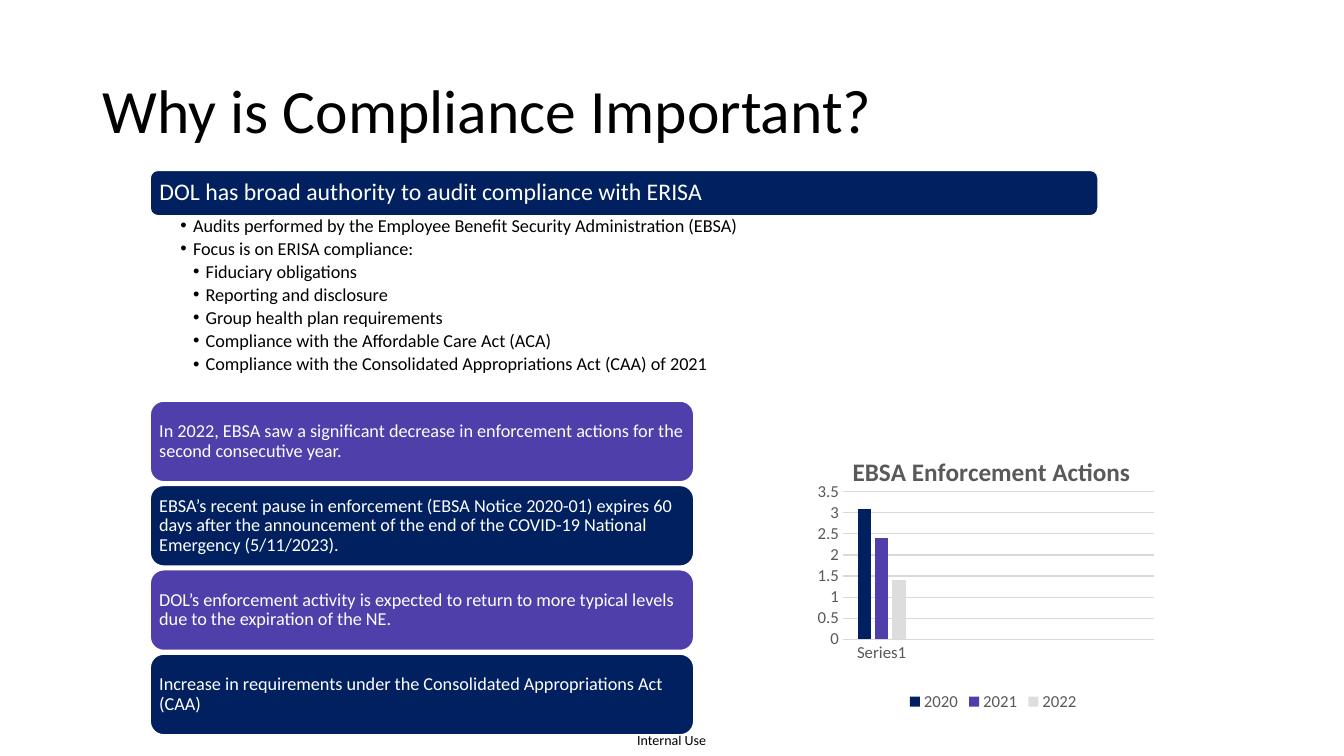
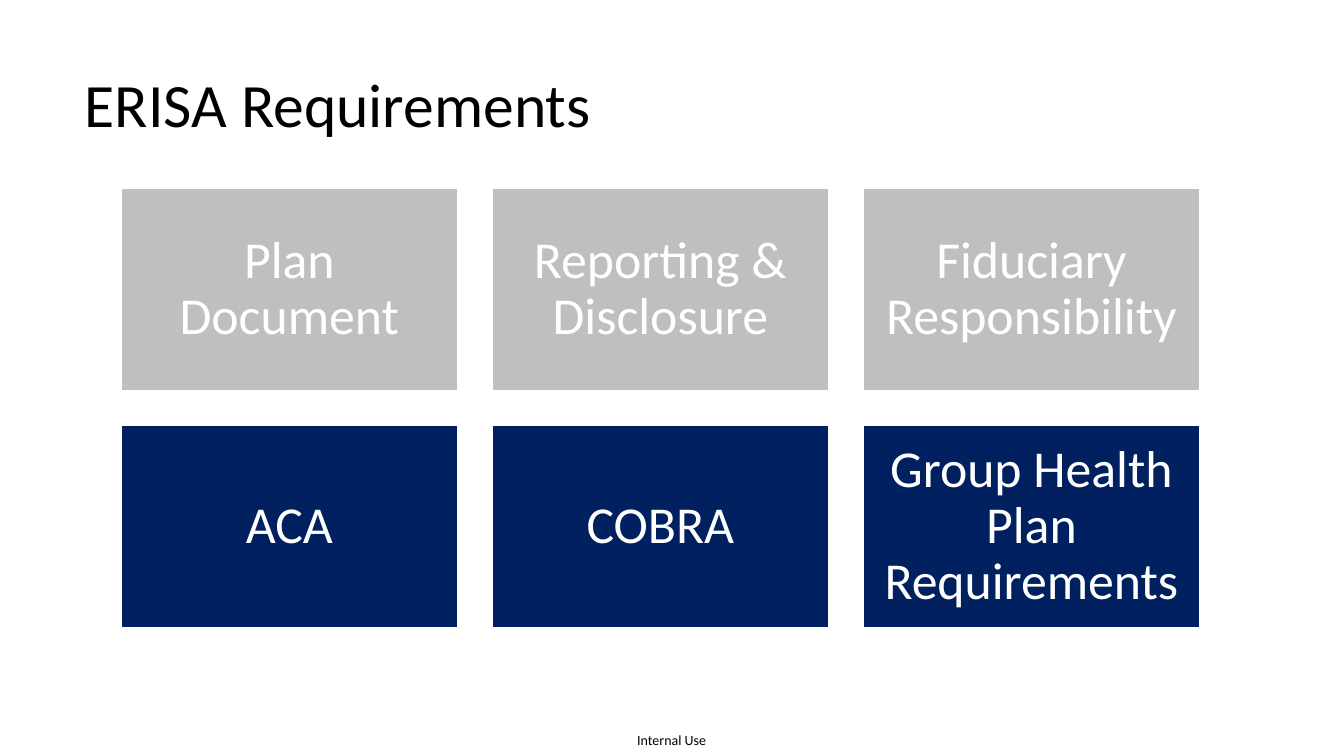
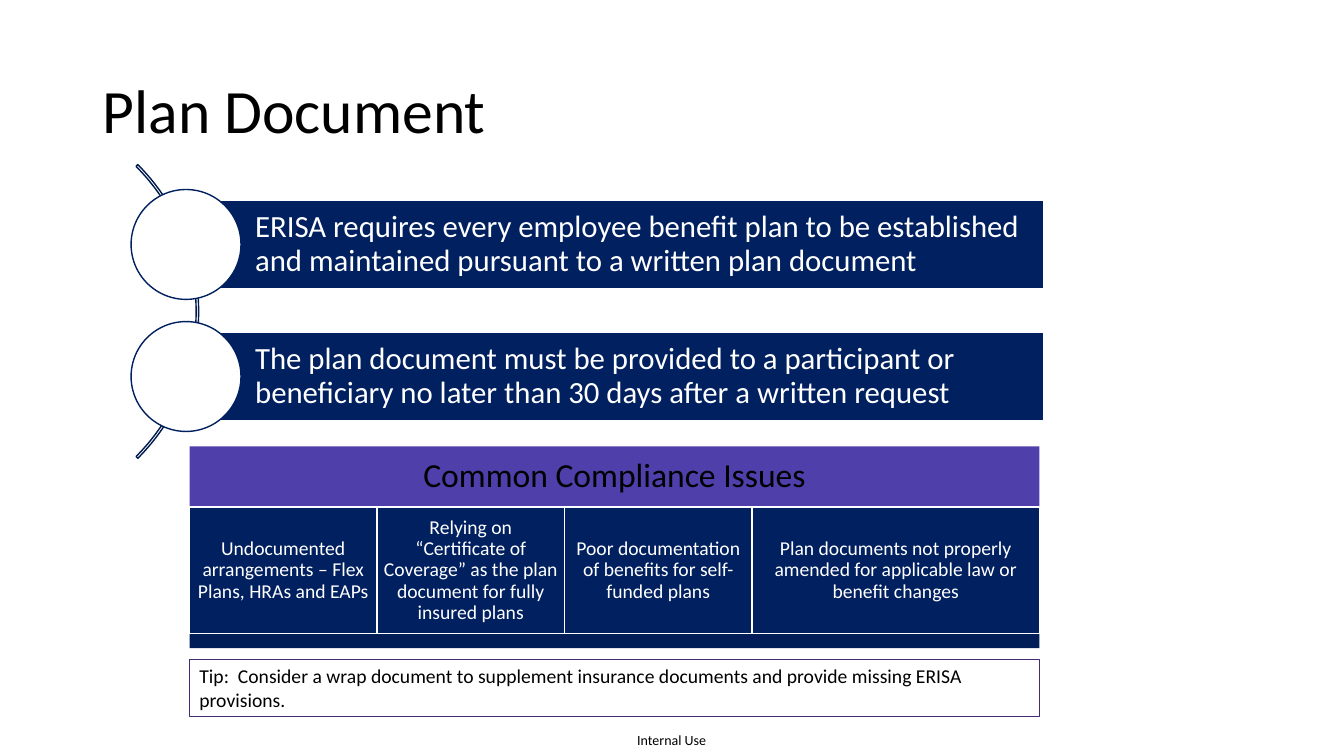
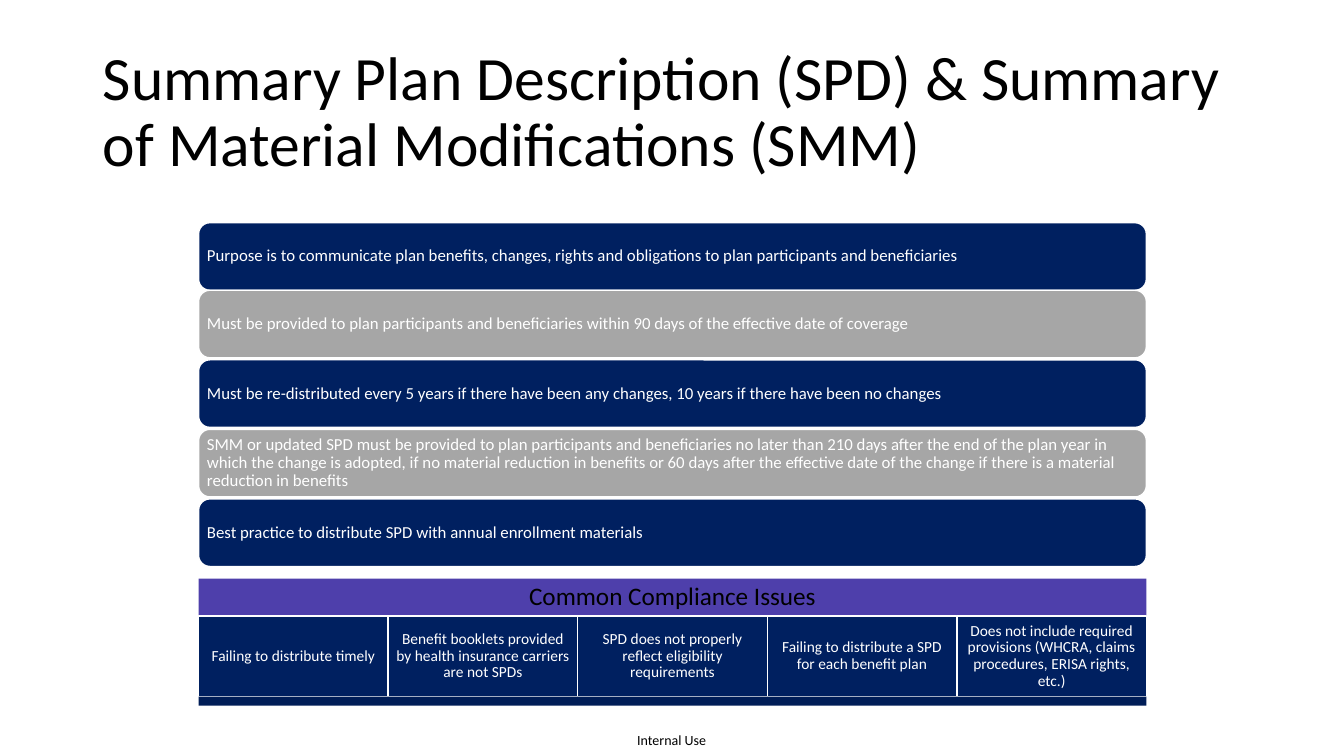
from lxml.etree import SubElement
from pptx import Presentation
from pptx.chart.data import CategoryChartData
from pptx.dml.color import RGBColor
from pptx.enum.chart import XL_CHART_TYPE, XL_LEGEND_POSITION, XL_TICK_MARK
from pptx.enum.shapes import MSO_SHAPE
from pptx.enum.text import MSO_ANCHOR, MSO_AUTO_SIZE, PP_ALIGN
from pptx.oxml.ns import qn
from pptx.util import Inches, Pt

# Shared style
FONT = "Calibri"
COLORS = {
    "navy": "002060", "deep": "001D57", "arc": "001A4D", "purple": "4E3FAB",
    "plum": "452B73", "gray": "A6A6A6", "silver": "BFBFBF", "pale": "DDDDDD",
    "grid": "D9D9D9", "label": "595959", "white": "FFFFFF", "black": "000000",
}
FOOTER = "Internal Use"
TITLE_BOX = (0.92, 0.4, 11.5, 1.45)

# Slide 1: audits
AUDIT_TITLE = "Why is Compliance Important?"
AUDIT_HEAD = "DOL has broad authority to audit compliance with ERISA"
AUDIT_BULLETS = [
    (1, "Audits performed by the Employee Benefit Security Administration (EBSA)"),
    (1, "Focus is on ERISA compliance:"),
    (2, "Fiduciary obligations"),
    (2, "Reporting and disclosure"),
    (2, "Group health plan requirements"),
    (2, "Compliance with the Affordable Care Act (ACA)"),
    (2, "Compliance with the Consolidated Appropriations Act (CAA) of 2021"),
]
TRENDS = [
    "In 2022, EBSA saw a significant decrease in enforcement actions for the "
    "second consecutive year.",
    "EBSA’s recent pause in enforcement (EBSA Notice 2020-01) expires 60 days "
    "after the announcement of the end of the COVID-19 National Emergency "
    "(5/11/2023).",
    "DOL’s enforcement activity is expected to return to more typical levels "
    "due to the expiration of the NE.",
    "Increase in requirements under the Consolidated Appropriations Act (CAA)",
]
CHART_TITLE = "EBSA Enforcement Actions"
CHART_CATS = ["Series1", "", "", ""]
CHART_DATA = [("2020", 3.1, "navy"), ("2021", 2.4, "purple"), ("2022", 1.4, "pale")]

# Slide 2: requirements
NEEDS_TITLE = "ERISA Requirements"
NEEDS = [
    ("silver", ["Plan Document", "Reporting & Disclosure", "Fiduciary Responsibility"]),
    ("navy", ["ACA", "COBRA", "Group Health Plan Requirements"]),
]

# Slide 3: plan document
PLAN_TITLE = "Plan Document"
PLAN_RULES = [
    "ERISA requires every employee benefit plan to be established and "
    "maintained pursuant to a written plan document",
    "The plan document must be provided to a participant or beneficiary no "
    "later than 30 days after a written request",
]
ISSUE_HEAD = "Common Compliance Issues"
PLAN_ISSUES = [
    ("Undocumented arrangements – Flex Plans, HRAs and EAPs", 1.86),
    ("Relying on “Certificate of Coverage” as the plan document for fully "
     "insured plans", 1.86),
    ("Poor documentation of benefits for self-funded plans", 1.86),
    ("Plan documents not properly amended for applicable law or benefit "
     "changes", 2.85),
]
TIP = ("Tip:  Consider a wrap document to supplement insurance documents and "
       "provide missing ERISA provisions.")

# Slide 4: summary plan description
SPD_TITLE = "Summary Plan Description (SPD) & Summary of Material Modifications (SMM)"
SPD_RULES = [
    (2.21, "Purpose is to communicate plan benefits, changes, rights and "
           "obligations to plan participants and beneficiaries"),
    (2.88, "Must be provided to plan participants and beneficiaries within 90 "
           "days of the effective date of coverage"),
    (3.57, "Must be re-distributed every 5 years if there have been any "
           "changes, 10 years if there have been no changes"),
    (4.26, "SMM or updated SPD must be provided to plan participants and "
           "beneficiaries no later than 210 days after the end of the plan "
           "year in which the change is adopted, if no material reduction in "
           "benefits or 60 days after the effective date of the change if "
           "there is a material reduction in benefits"),
    (4.95, "Best practice to distribute SPD with annual enrollment materials"),
]
SPD_ISSUES = [(text, 1.88) for text in (
    "Failing to distribute timely",
    "Benefit booklets provided by health insurance carriers are not SPDs",
    "SPD does not properly reflect eligibility requirements",
    "Failing to distribute a SPD for each benefit plan",
    "Does not include required provisions (WHCRA, claims procedures, ERISA "
    "rights, etc.)",
)]


# Helpers
def color(name):
    return RGBColor.from_string(COLORS[name])


def place(box):
    return [Inches(v) for v in box]


def style(font, size, name, bold=False):
    font.name, font.size, font.bold = FONT, Pt(size), bold
    font.color.rgb = color(name)


def inset(frame, left, top, right, low):
    frame.margin_left, frame.margin_top = Inches(left), Inches(top)
    frame.margin_right, frame.margin_bottom = Inches(right), Inches(low)


def write(frame, text, size, ink, align=PP_ALIGN.LEFT, space=0.9):
    frame.word_wrap = True
    frame.text = text
    para = frame.paragraphs[0]
    para.alignment, para.line_spacing = align, space
    style(para.runs[0].font, size, ink)


def add_box(slide, kind, box, fill=None, line=None, width=1):
    shape = slide.shapes.add_shape(kind, *place(box))
    shape.shadow.inherit = False
    if fill:
        shape.fill.solid()
        shape.fill.fore_color.rgb = color(fill)
    else:
        shape.fill.background()
    if line:
        shape.line.color.rgb = color(line)
        shape.line.width = Pt(width)
    else:
        shape.line.fill.background()
    return shape


def add_card(slide, kind, box, fill, text, size, pad, ink="white",
             align=PP_ALIGN.LEFT, line="white", left=None):
    shape = add_box(slide, kind, box, fill, line)
    frame = shape.text_frame
    inset(frame, pad if left is None else left, pad, pad, pad)
    frame.vertical_anchor = MSO_ANCHOR.MIDDLE
    write(frame, text, size, ink, align)


def add_issues(slide, left, tops, issues, head_size, head_pad, size, pad):
    head, body, base, end = tops
    wide = sum(width for _, width in issues)
    add_card(slide, MSO_SHAPE.RECTANGLE, (left, head, wide, body - head), "purple",
             ISSUE_HEAD, head_size, head_pad, "black", PP_ALIGN.CENTER, None)
    x = left
    for text, width in issues:
        add_card(slide, MSO_SHAPE.RECTANGLE, (x, body, width, base - body), "navy",
                 text, size, pad, align=PP_ALIGN.CENTER)
        x += width
    add_box(slide, MSO_SHAPE.RECTANGLE, (left, base, wide, end - base), "deep")


def add_slide(prs, title, box=TITLE_BOX):
    slide = prs.slides.add_slide(prs.slide_layouts[5])
    head = slide.shapes.title
    head.left, head.top, head.width, head.height = place(box)
    frame = head.text_frame
    frame.auto_size = MSO_AUTO_SIZE.NONE
    frame.vertical_anchor = MSO_ANCHOR.MIDDLE
    write(frame, title, 44, "black")
    return slide


def add_footer(prs, slide):
    """Move a footer text to the layout, so that every slide shows it."""
    note = slide.shapes.add_textbox(*place((6.32, 7.26, 0.72, 0.17)))
    inset(note.text_frame, 0, 0, 0, 0)
    write(note.text_frame, FOOTER, 10, "black", space=1.0)
    note.text_frame.word_wrap = False
    prs.slide_layouts[5].shapes.element.append(note.element)


def add_bullets(slide, box, items):
    frame = slide.shapes.add_textbox(*place(box)).text_frame
    frame.word_wrap = True
    inset(frame, 0.3, 0.02, 0.13, 0.02)
    for i, (level, text) in enumerate(items):
        para = frame.add_paragraph() if i else frame.paragraphs[0]
        para.text = text
        para.level = level
        para.line_spacing, para.space_after = 0.9, Pt(2.4)
        style(para.runs[0].font, 13, "black")
        props = para.runs[0].font and para._p.get_or_add_pPr()
        props.set("marL", str(Inches(0.125 * level)))
        props.set("indent", str(Inches(-0.125)))
        SubElement(props, qn("a:buFont"), typeface="Arial")
        SubElement(props, qn("a:buChar"), char="•")


def set_layout(part, **values):
    """Fix the place of a chart part, in shares of the chart."""
    layout = part.find(qn("c:layout"))
    if layout is None:
        layout = SubElement(part, qn("c:layout"))
        part.insert(0, layout)
    manual = SubElement(layout, qn("c:manualLayout"))
    for key, value in values.items():
        SubElement(manual, qn("c:" + key), val=str(value))


def add_actions(slide, box):
    data = CategoryChartData()
    data.categories = CHART_CATS
    for name, value, _ in CHART_DATA:
        data.add_series(name, [value, None, None, None])
    chart = slide.shapes.add_chart(
        XL_CHART_TYPE.COLUMN_CLUSTERED, *place(box), data).chart
    style(chart.font, 10, "black")

    # Title and plot
    chart.has_title = True
    frame = chart.chart_title.text_frame
    frame.text = CHART_TITLE
    style(frame.paragraphs[0].runs[0].font, 18, "label", True)
    set_layout(chart.chart_title._element, xMode="edge", yMode="edge", x=0.22, y=0.06)
    plot = chart.plots[0]
    plot.gap_width, plot.overlap, plot.vary_by_categories = 219, -27, False
    set_layout(plot._element.getparent(), layoutTarget="inner", xMode="edge",
               yMode="edge", x=0.21, y=0.21, w=0.6, h=0.52)
    for series, (_, _, fill) in zip(plot.series, CHART_DATA):
        series.format.fill.solid()
        series.format.fill.fore_color.rgb = color(fill)

    # Axes and legend
    for axis in (chart.category_axis, chart.value_axis):
        axis.major_tick_mark = axis.minor_tick_mark = XL_TICK_MARK.NONE
        style(axis.tick_labels.font, 12, "label")
    chart.value_axis.format.line.fill.background()
    for line in (chart.category_axis.format.line,
                 chart.value_axis.major_gridlines.format.line):
        line.color.rgb = color("grid")
        line.width = Pt(0.75)
    chart.has_legend = True
    chart.legend.position = XL_LEGEND_POSITION.BOTTOM
    chart.legend.include_in_layout = False
    style(chart.legend.font, 12, "label")


# Slides
def build_audit(prs):
    slide = add_slide(prs, AUDIT_TITLE)
    add_footer(prs, slide)
    add_card(slide, MSO_SHAPE.ROUNDED_RECTANGLE, (1.49, 1.69, 9.4, 0.45), "navy",
             AUDIT_HEAD, 17, 0.07)
    add_bullets(slide, (1.49, 2.13, 9.4, 1.73), AUDIT_BULLETS)
    first, last = 3.98, 6.49
    step = (last - first) / (len(TRENDS) - 1)
    for i, text in enumerate(TRENDS):
        add_card(slide, MSO_SHAPE.ROUNDED_RECTANGLE, (1.49, first + i * step, 5.39, 0.8),
                 ("purple", "navy")[i % 2], text, 13, 0.05)
    add_actions(slide, (7.28, 4.29, 5.14, 2.81))


def build_needs(prs):
    slide = add_slide(prs, NEEDS_TITLE, (0.74, 0.67, 9.4, 0.79))
    wide, high, gap = 3.34, 2.01, 0.34
    for row, (fill, names) in enumerate(NEEDS):
        for col, name in enumerate(names):
            box = (1.2 + col * (wide + gap), 1.87 + row * (high + gap), wide, high)
            add_card(slide, MSO_SHAPE.RECTANGLE, box, fill, name, 37, 0.15,
                     align=PP_ALIGN.CENTER)


def build_plan(prs):
    slide = add_slide(prs, PLAN_TITLE)
    arc = add_box(slide, MSO_SHAPE.BLOCK_ARC, (-2.15, 1.03, 4.12, 4.12), line="arc")
    for i, value in enumerate((189, 27, 0.006)):
        arc.adjustments[i] = value
    for i, text in enumerate(PLAN_RULES):
        top = 1.99 + i * 1.31
        add_card(slide, MSO_SHAPE.RECTANGLE, (1.84, top, 8.51, 0.87), "navy",
                 text, 22, 0.06, left=0.69)
        add_box(slide, MSO_SHAPE.OVAL, (1.3, top - 0.11, 1.09, 1.09), "white", "navy")
    add_issues(slide, 1.88, (4.43, 5.03, 6.29, 6.43), PLAN_ISSUES, 24, 0.1, 14, 0.06)
    tip = add_box(slide, MSO_SHAPE.RECTANGLE, (1.88, 6.54, 8.43, 0.57),
                  line="plum", width=0.75)
    tip.text_frame.vertical_anchor = MSO_ANCHOR.TOP
    write(tip.text_frame, TIP, 14, "black", space=1.0)


def build_spd(prs):
    slide = add_slide(prs, SPD_TITLE)
    for i, (top, text) in enumerate(SPD_RULES):
        add_card(slide, MSO_SHAPE.ROUNDED_RECTANGLE, (1.97, top, 9.4, 0.67),
                 ("navy", "gray")[i % 2], text, 12, 0.05)
    add_issues(slide, 1.97, (5.74, 6.11, 6.91, 7), SPD_ISSUES, 18, 0.07, 11, 0.05)


def main():
    prs = Presentation()
    prs.slide_width, prs.slide_height = Inches(13.33), Inches(7.5)
    for build in (build_audit, build_needs, build_plan, build_spd):
        build(prs)
    prs.save("out.pptx")


if __name__ == "__main__":
    main()
